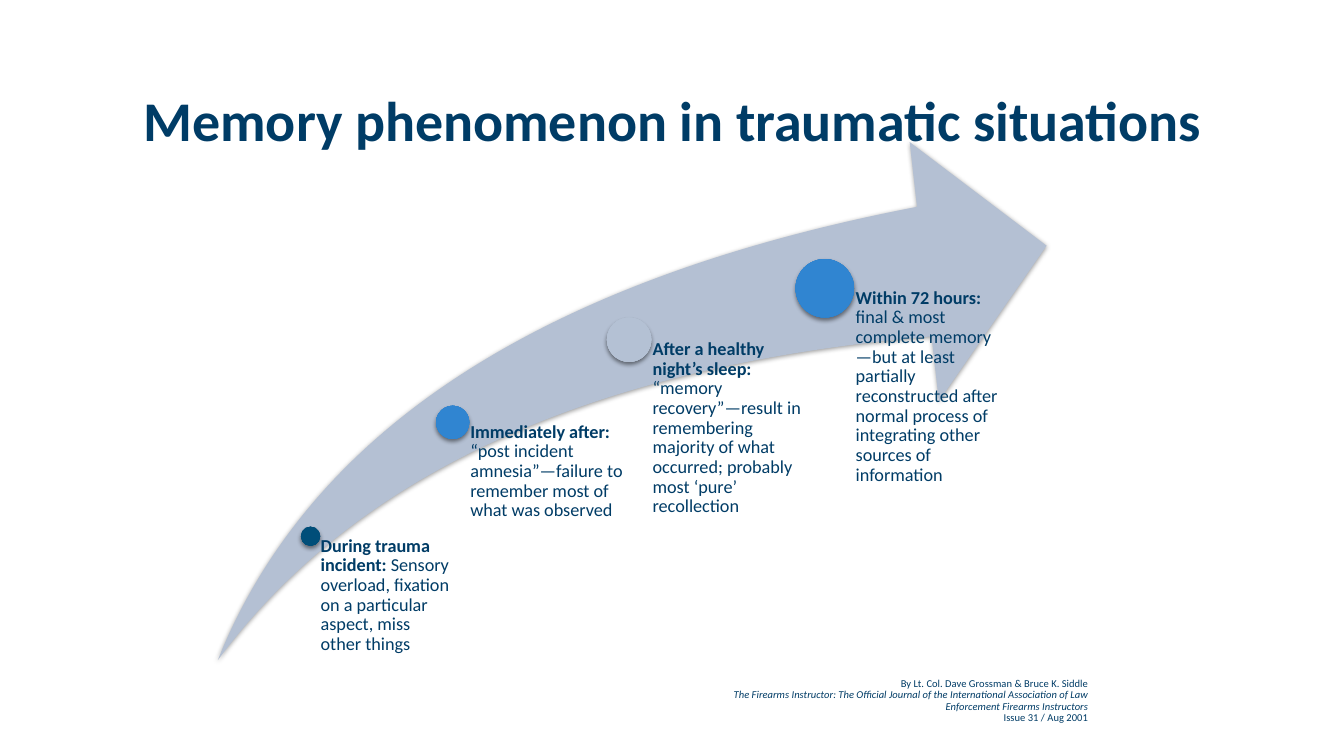
from lxml.etree import fromstring
from pptx import Presentation
from pptx.dml.color import RGBColor
from pptx.enum.shapes import MSO_SHAPE
from pptx.enum.text import MSO_ANCHOR, MSO_AUTO_SIZE, PP_ALIGN
from pptx.oxml.ns import nsdecls, qn
from pptx.util import Inches, Pt

COLORS = {
    "ink": "003C66", "arrow": "B4C0D3", "shade": "000000",
    "navy": "004E79", "navy_rim": "004871",
    "blue": "3085D1", "blue_rim": "2D7CC3",
    "gray": "B4C1D4", "gray_rim": "A8B4C6",
}
FLOOR = 6.54  # common bottom edge of the arrow and its labels

# centre x, centre y, dot diameter, label width, color, heading, detail
STEPS = [
    (3.08, 5.32, 0.19, 1.4, "navy", "During trauma incident: ",
     "Sensory overload, fixation on a particular aspect, miss other things"),
    (4.49, 4.19, 0.33, 1.73, "blue", "Immediately after: ",
     "“post incident amnesia”—failure to remember most of what was observed"),
    (6.24, 3.37, 0.44, 1.73, "gray", "After a healthy night’s sleep: ",
     "“memory recovery”—result in remembering majority of what occurred; "
     "probably most ‘pure’ recollection"),
    (8.18, 2.86, 0.58, 1.73, "blue", "Within 72 hours: ",
     "final & most complete memory—but at least partially reconstructed "
     "after normal process of integrating other sources of information"),
]


def write(frame, runs, size, align=PP_ALIGN.LEFT, anchor=MSO_ANCHOR.TOP, inset=None):
    """Fill a frame with one paragraph of (text, bold, italic) runs."""
    frame.word_wrap = True
    frame.auto_size = MSO_AUTO_SIZE.NONE
    frame.vertical_anchor = anchor
    if inset is not None:
        frame.margin_left = Inches(inset)
        frame.margin_top = frame.margin_right = frame.margin_bottom = 0
    para = frame.paragraphs[0]
    para.alignment = align
    para.line_spacing = 0.9
    for text, bold, italic in runs:
        run = para.add_run()
        run.text = text.rstrip("\n")
        font = run.font
        font.name, font.size = "Calibri", Pt(size)
        font.bold, font.italic = bold, italic
        font.color.rgb = RGBColor.from_string(COLORS["ink"])
        if text.endswith("\n"):
            para.add_line_break()


def add_shape(slide, kind, box, color, alpha, drop):
    """Add a borderless shape with a soft shadow falling straight down."""
    shape = slide.shapes.add_shape(kind, *map(Inches, box))
    shape.fill.solid()
    shape.fill.fore_color.rgb = RGBColor.from_string(COLORS[color])
    shape.line.fill.background()
    shape.shadow.inherit = False
    shape._element.spPr.find(qn("a:effectLst")).append(fromstring(
        f'<a:outerShdw {nsdecls("a")} blurRad="{Pt(3)}" dist="{Pt(drop)}" '
        f'dir="5400000" rotWithShape="0"><a:srgbClr val="{COLORS["shade"]}">'
        f'<a:alpha val="{alpha * 1000}"/></a:srgbClr></a:outerShdw>'))
    return shape


def add_rim(shape, color):
    """Darken the outer edge of a dot with a radial gradient."""
    stops = [(0, color), (90, color), (100, color + "_rim")]
    marks = "".join(
        f'<a:gs pos="{pos * 1000}"><a:srgbClr val="{COLORS[name]}"/></a:gs>'
        for pos, name in stops)
    props = shape._element.spPr
    props.replace(props.find(qn("a:solidFill")), fromstring(
        f'<a:gradFill {nsdecls("a")} rotWithShape="1"><a:gsLst>{marks}</a:gsLst>'
        '<a:path path="circle"><a:fillToRect l="100000" t="100000" '
        'r="100000" b="100000"/></a:path></a:gradFill>'))


def add_title(slide, box):
    title = slide.shapes.title
    title.left, title.top, title.width, title.height = map(Inches, box)
    write(title.text_frame,
          [("Memory phenomenon in traumatic situations", True, False)],
          40, PP_ALIGN.CENTER, MSO_ANCHOR.MIDDLE)


def add_arrow(slide, box):
    arrow = add_shape(slide, MSO_SHAPE.SWOOSH_ARROW, box, "arrow", 40, 1.4)
    arrow.adjustments[0] = arrow.adjustments[1] = 0.25


def add_step(slide, x, y, size, width, color, head, detail):
    """Add a dot centred on x, y and the label that starts at its centre."""
    box = (x - size / 2, y - size / 2, size, size)
    add_rim(add_shape(slide, MSO_SHAPE.OVAL, box, color, 45, 2), color)
    label = slide.shapes.add_textbox(*map(Inches, (x, y, width, FLOOR - y)))
    write(label.text_frame, [(head, True, False), (detail, False, False)],
          13, inset=size * 0.53)


def add_source(slide, box):
    note = slide.shapes.add_textbox(*map(Inches, box))
    write(note.text_frame, [
        ("By Lt. Col. Dave Grossman & Bruce K. Siddle\n", False, False),
        ("The Firearms Instructor: The Official Journal of the International "
         "Association of Law Enforcement Firearms Instructors\n", False, True),
        ("Issue 31 / Aug 2001", False, False),
    ], 7.5, PP_ALIGN.RIGHT)


def main():
    deck = Presentation()
    deck.slide_width, deck.slide_height = Inches(13.33), Inches(7.5)
    slide = deck.slides.add_slide(deck.slide_layouts[5])
    add_title(slide, (0.92, 0.5, 11.5, 1.45))
    add_arrow(slide, (2.16, 1.41, 8.22, 5.14))
    for step in STEPS:
        add_step(slide, *step)
    add_source(slide, (6.63, 6.68, 4.26, 0.66))
    deck.save("out.pptx")


if __name__ == "__main__":
    main()
